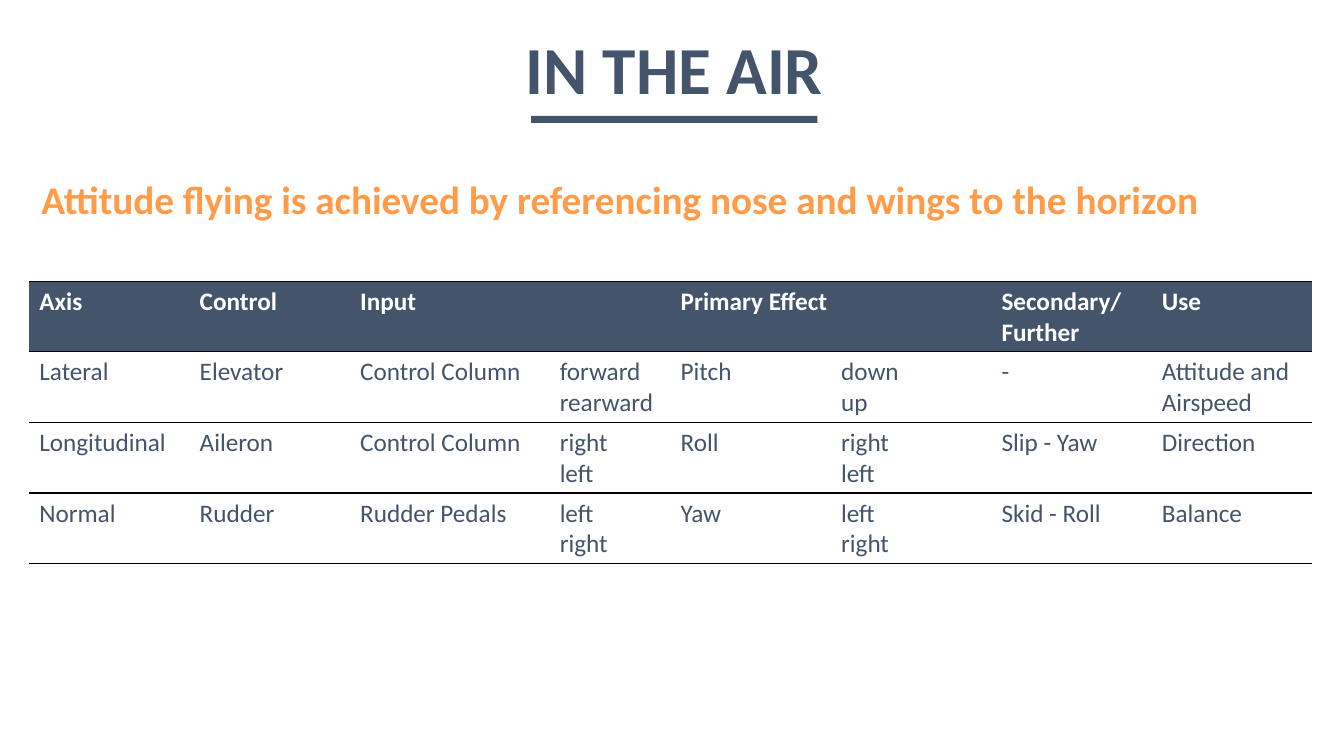
from dataclasses import dataclass

from lxml import etree
from pptx import Presentation
from pptx.dml.color import RGBColor
from pptx.enum.shapes import MSO_SHAPE
from pptx.enum.text import MSO_ANCHOR, MSO_AUTO_SIZE, PP_ALIGN
from pptx.oxml.ns import qn
from pptx.util import Pt

RECTANGLE = MSO_SHAPE.RECTANGLE
TOP = MSO_ANCHOR.TOP
FIT_SHAPE = MSO_AUTO_SIZE.SHAPE_TO_FIT_TEXT
LEFT, CENTER = PP_ALIGN.LEFT, PP_ALIGN.CENTER
TITLE_ONLY = 5


@dataclass(frozen=True)
class Theme:
    font: str = "Calibri"
    slate: str = "44546A"
    orange: str = "FF9B49"
    white: str = "FFFFFF"
    rule: str = "000000"
    title_size: int = 48
    lead_size: int = 28
    table_size: int = 18


class SlideBuilder:
    def __init__(self, page, theme):
        self.page = page
        self.theme = theme

    def set_text(self, frame, text, size, color, bold, align=LEFT, spacing=None):
        frame.text = text
        for paragraph in frame.paragraphs:
            paragraph.alignment = align
            paragraph.line_spacing = spacing
            font = paragraph.font
            font.name, font.size, font.bold = self.theme.font, Pt(size), bold
            font.color.rgb = RGBColor.from_string(color)

    def set_frame(self, frame, side, edge, wrap):
        frame.margin_left = frame.margin_right = Pt(side)
        frame.margin_top = frame.margin_bottom = Pt(edge)
        frame.word_wrap = wrap
        frame.vertical_anchor = TOP
        frame.auto_size = FIT_SHAPE

    def title(self, text, left, top, width, height):
        box = self.page.shapes.title
        box.left, box.top = Pt(left), Pt(top)
        box.width, box.height = Pt(width), Pt(height)
        self.set_frame(box.text_frame, 3.6, 1.8, False)
        self.set_text(box.text_frame, text, self.theme.title_size,
                      self.theme.slate, True, CENTER)

    def lead(self, text, left, top, width, height):
        box = self.page.shapes.add_textbox(Pt(left), Pt(top), Pt(width), Pt(height))
        self.set_frame(box.text_frame, 8.64, 4.32, True)
        self.set_text(box.text_frame, text, self.theme.lead_size,
                      self.theme.orange, True, spacing=1.1)

    def bar(self, left, top, width, height):
        bar = self.page.shapes.add_shape(
            RECTANGLE, Pt(left), Pt(top), Pt(width), Pt(height))
        bar.shadow.inherit = False
        bar.fill.solid()
        bar.fill.fore_color.rgb = RGBColor.from_string(self.theme.slate)
        bar.line.fill.background()

    def borders(self, cell):
        """Draw horizontal rules only."""
        properties = cell._tc.get_or_add_tcPr()
        for side in ("lnL", "lnR", "lnT", "lnB"):
            line = etree.SubElement(properties, qn(f"a:{side}"), w=str(Pt(1)))
            if side in ("lnL", "lnR"):
                etree.SubElement(line, qn("a:noFill"))
            else:
                fill = etree.SubElement(line, qn("a:solidFill"))
                etree.SubElement(fill, qn("a:srgbClr"), val=self.theme.rule)

    def table(self, rows, widths, left, top, row_height):
        frame = self.page.shapes.add_table(
            len(rows), len(widths), Pt(left), Pt(top),
            Pt(sum(widths)), Pt(row_height * len(rows)))
        table = frame.table
        table.horz_banding = False
        for column, width in zip(table.columns, widths):
            column.width = Pt(width)
        for row_index, texts in enumerate(rows):
            table.rows[row_index].height = Pt(row_height)
            header = row_index == 0
            fill = self.theme.slate if header else self.theme.white
            color = self.theme.white if header else self.theme.slate
            for column_index, text in enumerate(texts):
                cell = table.cell(row_index, column_index)
                self.borders(cell)
                cell.fill.solid()
                cell.fill.fore_color.rgb = RGBColor.from_string(fill)
                self.set_text(cell.text_frame, text, self.theme.table_size,
                              color, header)
        return table


CONTROL_ROWS = [
    ("Axis", "Control", "Input", "", "Primary Effect", "",
     "Secondary/Further", "Use"),
    ("Lateral", "Elevator", "Control Column", "forward\nrearward", "Pitch",
     "down\nup", "-", "Attitude and Airspeed"),
    ("Longitudinal", "Aileron", "Control Column", "right\nleft", "Roll",
     "right\nleft", "Slip - Yaw", "Direction"),
    ("Normal", "Rudder", "Rudder Pedals", "left\nright", "Yaw",
     "left\nright", "Skid - Roll", "Balance"),
]
COLUMN = 114.6
COLUMN_WIDTHS = [COLUMN] * 2 + [142.6, 86.4] + [COLUMN] * 4
MARGIN = 20.9


def main():
    deck = Presentation()
    deck.slide_width, deck.slide_height = Pt(960), Pt(540)
    page = deck.slides.add_slide(deck.slide_layouts[TITLE_ONLY])
    builder = SlideBuilder(page, Theme())

    # Controls table
    table = builder.table(CONTROL_ROWS, COLUMN_WIDTHS, MARGIN, 200.9, 50.4)
    table.cell(0, 4).merge(table.cell(0, 5))

    # Title with underline
    builder.title("IN THE AIR", 370.8, 18, 221.8, 61.9)
    builder.bar(379.4, 82.8, 204.5, 5)

    # Key statement
    builder.lead("Attitude flying is achieved by referencing nose and wings "
                 "to the horizon", MARGIN, 117.4, sum(COLUMN_WIDTHS), 46.1)

    deck.save("out.pptx")


if __name__ == "__main__":
    main()
